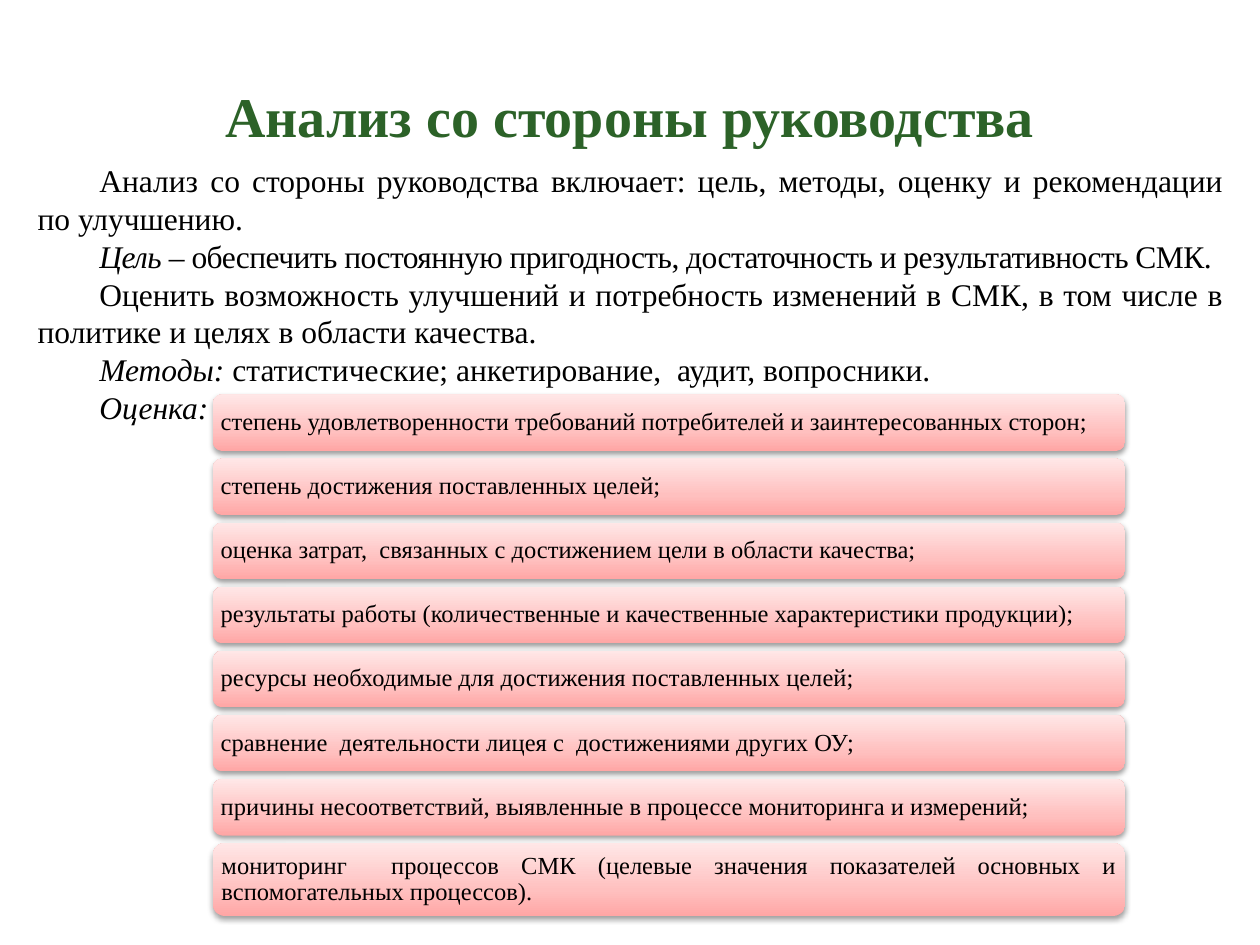
import pptx
import pptx.dml.color
import pptx.enum.shapes
import pptx.enum.text
import pptx.oxml
import pptx.oxml.ns
import pptx.util
from pptx.util import Inches

FONT = "Times New Roman"
COLORS = {
    "text": "000000",
    "title_dark": "2B6228",
    "title_green": "2C6228",
    "title_light": "59943C",
    "title_deep": "0A4800",
    "card_bottom": "FFA6A5",
    "card_middle": "FFC0BF",
    "card_top": "FFE7E7",
}
TITLE_STOPS = [(0, "title_dark"), (40, "title_green"), (70, "title_light"), (100, "title_deep")]
CARD_STOPS = [(0, "card_bottom"), (35, "card_middle"), (100, "card_top")]
ALIGN = pptx.enum.text.PP_ALIGN
ANCHOR = pptx.enum.text.MSO_ANCHOR

INTRODUCTION = [
    ("", "Анализ со стороны руководства включает: цель, методы, оценку и рекомендации по улучшению. ", 0),
    ("Цель", " – обеспечить постоянную пригодность, достаточность и результативность СМК.", -0.3),
    ("", "Оценить возможность улучшений и потребность изменений в СМК, в том числе в политике и целях в области качества. ", 0),
    ("Методы: ", "статистические; анкетирование,  аудит, вопросники.", 0),
    ("Оценка: ", "", 0),
]
CRITERIA = [
    "степень удовлетворенности требований потребителей и заинтересованных сторон;",
    "степень достижения поставленных целей;",
    "оценка затрат,  связанных с достижением цели в области качества;",
    "результаты работы (количественные и качественные характеристики продукции);",
    "ресурсы необходимые для достижения поставленных целей;",
    "сравнение  деятельности лицея с  достижениями других ОУ;",
    "причины несоответствий, выявленные в процессе мониторинга и измерений;",
    "мониторинг  процессов СМК (целевые значения показателей основных и вспомогательных процессов).",
]


def xml(text):
    """Parse an XML fragment in the drawing namespace."""
    return pptx.oxml.parse_xml(text.replace(" ", f' {pptx.oxml.ns.nsdecls("a")} ', 1))


def set_gradient(fill, element, stops):
    """Fill with an upward gradient of the named colour stops."""
    fill.gradient()
    fill.gradient_angle = 90
    stop_list = element.find(".//" + pptx.oxml.ns.qn("a:gsLst"))
    for stop in list(stop_list):
        stop_list.remove(stop)
    for position, color in stops:
        stop_list.append(xml(f'<a:gs pos="{position * 1000}"><a:srgbClr val="{COLORS[color]}"/></a:gs>'))


def add_text(paragraph, text, size=18, color="text", bold=False, italic=False, spacing=0):
    """Append a formatted run and return it."""
    run = paragraph.add_run()
    run.text = text
    run.font.name = FONT
    run.font.size = pptx.util.Pt(size)
    run.font.bold = bold
    run.font.italic = italic
    run.font.color.rgb = pptx.dml.color.RGBColor.from_string(COLORS[color])
    if spacing:
        run.font._element.set("spc", str(round(spacing * 100)))
    return run


def add_title(slide, left, top, width, height):
    """Place the slide title in its placeholder."""
    title = slide.shapes.title
    title.left, title.top, title.width, title.height = left, top, width, height
    title.text_frame.vertical_anchor = ANCHOR.MIDDLE
    title.text_frame.word_wrap = True
    paragraph = title.text_frame.paragraphs[0]
    paragraph.alignment = ALIGN.CENTER
    paragraph.line_spacing = 1.14
    run = add_text(paragraph, "Анализ со стороны руководства", size=32, color="title_green", bold=True)
    set_gradient(run.font.fill, run.font._element, TITLE_STOPS)


def add_introduction(slide, left, top, width, height):
    """Add the justified paragraphs with first-line indents."""
    frame = slide.shapes.add_textbox(left, top, width, height).text_frame
    frame.word_wrap = True
    for index, (term, text, spacing) in enumerate(INTRODUCTION):
        paragraph = frame.add_paragraph() if index else frame.paragraphs[0]
        paragraph.alignment = ALIGN.JUSTIFY
        paragraph._p.get_or_add_pPr().set("indent", str(Inches(0.49)))
        if term:
            add_text(paragraph, term, italic=True, spacing=spacing)
        if text:
            add_text(paragraph, text, spacing=spacing)


def add_card(slide, text, left, top, width, height, alignment):
    """Add one rounded criterion card with a soft shadow."""
    card = slide.shapes.add_shape(
        pptx.enum.shapes.MSO_SHAPE.ROUNDED_RECTANGLE, left, top, width, height)
    properties = card._element.spPr
    set_gradient(card.fill, properties, CARD_STOPS)
    card.line.fill.background()
    card.shadow.inherit = False
    properties.find(pptx.oxml.ns.qn("a:effectLst")).append(xml(
        '<a:outerShdw blurRad="40000" dist="20000" dir="5400000" rotWithShape="0">'
        '<a:srgbClr val="000000"><a:alpha val="38000"/></a:srgbClr></a:outerShdw>'))
    frame = card.text_frame
    frame.word_wrap = True
    frame.vertical_anchor = ANCHOR.MIDDLE
    frame.margin_left = frame.margin_right = Inches(0.04)
    frame.margin_top = frame.margin_bottom = Inches(0.04)
    paragraph = frame.paragraphs[0]
    paragraph.alignment = alignment
    paragraph.line_spacing = 0.9
    add_text(paragraph, text, size=14)


def add_criteria(slide, left, top, width, height):
    """Stack the criteria evenly, with a taller last card."""
    card_height, last_height = Inches(0.45), Inches(0.58)
    last = len(CRITERIA) - 1
    pitch = (height - last_height) / last
    for index, text in enumerate(CRITERIA):
        is_last = index == last
        add_card(slide, text, left, round(top + index * pitch), width,
                 last_height if is_last else card_height,
                 ALIGN.JUSTIFY if is_last else ALIGN.LEFT)


def main():
    """Build and save the presentation."""
    presentation = pptx.Presentation()
    presentation.slide_width, presentation.slide_height = Inches(10), Inches(7.5)
    slide = presentation.slides.add_slide(presentation.slide_layouts[5])
    add_introduction(slide, Inches(0.2), Inches(1.23), Inches(9.61), Inches(2.44))
    add_title(slide, Inches(0), Inches(0.39), Inches(10), Inches(0.98))
    add_criteria(slide, Inches(1.69), Inches(3.13), Inches(7.24), Inches(4.14))
    presentation.save("out.pptx")


if __name__ == "__main__":
    main()
